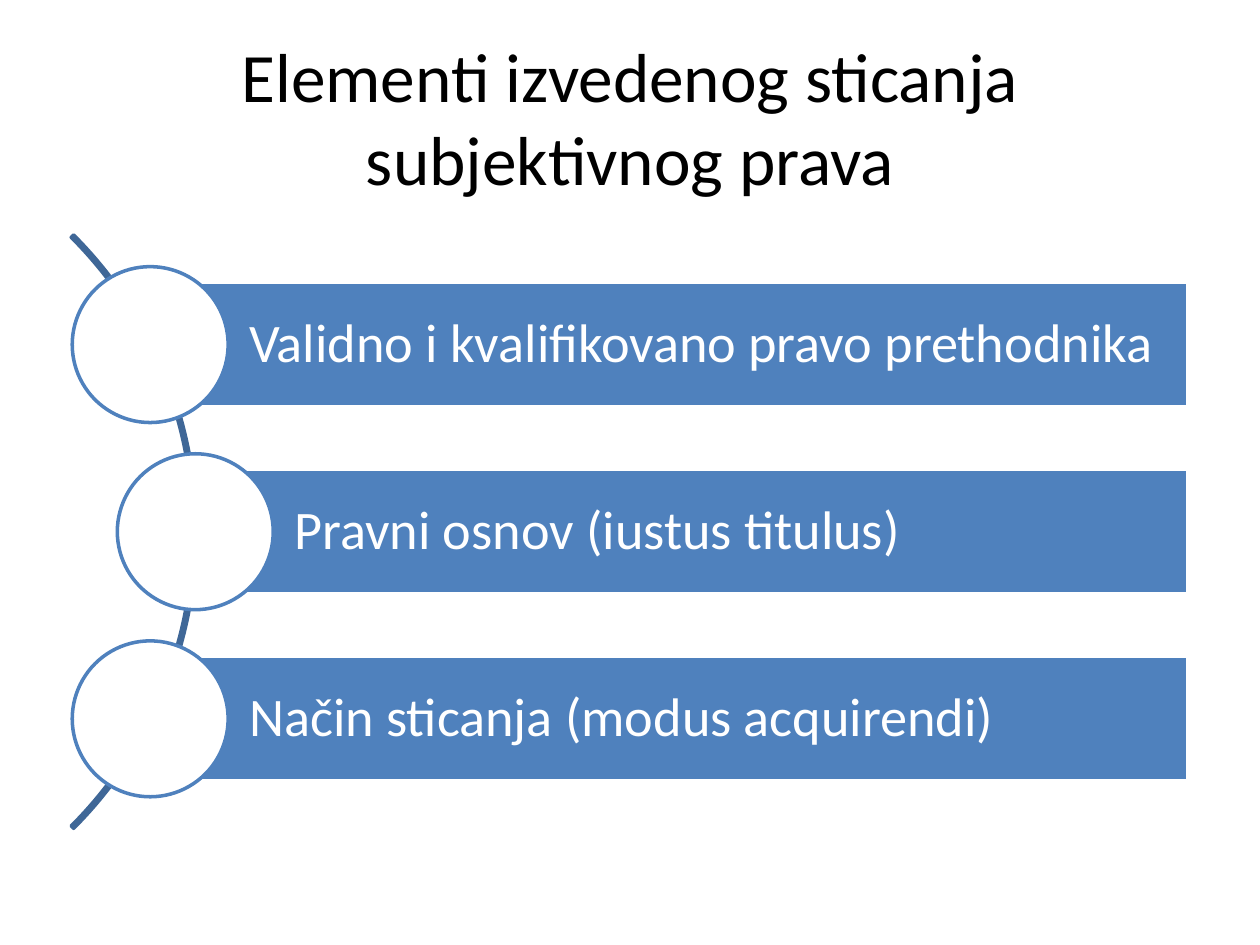
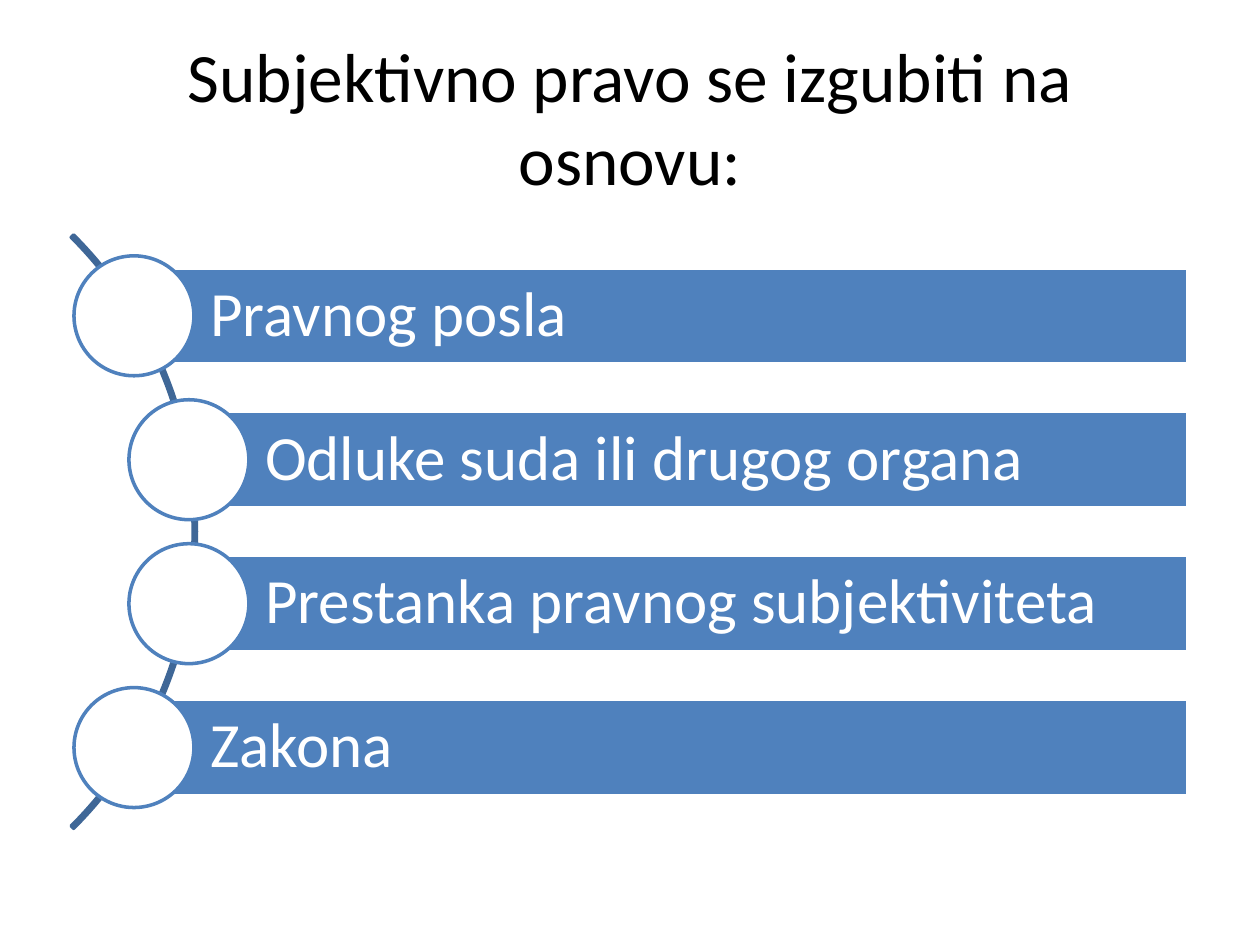
"""Build two slides that list legal elements as bars strung along an arc."""
import math

import pptx
import pptx.dml.color
import pptx.enum.shapes
import pptx.enum.text
import pptx.util

RGBColor = pptx.dml.color.RGBColor
MSO_SHAPE = pptx.enum.shapes.MSO_SHAPE
MSO_ANCHOR = pptx.enum.text.MSO_ANCHOR
Inches = pptx.util.Inches
Pt = pptx.util.Pt

BLUE = RGBColor(0x4F, 0x81, 0xBD)
DARK_BLUE = RGBColor(0x3F, 0x67, 0x97)
WHITE = RGBColor(0xFF, 0xFF, 0xFF)
BLACK = RGBColor(0x00, 0x00, 0x00)
FONT = "Calibri"

SLIDE_W, SLIDE_H = 10, 7.5
MARGIN = 0.05 * SLIDE_W
TITLE_TOP, TITLE_H = 0.04 * SLIDE_H, SLIDE_H / 6
BODY_H = 0.66 * SLIDE_H
MIDDLE_Y = 4.22
BAR_RIGHT = 9.43
ARC_LEFT, ARC_SIZE = -5.1, 6.66
TRACK_X, TRACK_R = -1.71, 3.26

SLIDES = [
    ("Elementi izvedenog sticanja subjektivnog prava", 31, [
        "Validno i kvalifikovano pravo prethodnika",
        "Pravni osnov (iustus titulus)",
        "Način sticanja (modus acquirendi)",
    ]),
    ("Subjektivno pravo se izgubiti na osnovu:", 36, [
        "Pravnog posla",
        "Odluke suda ili drugog organa",
        "Prestanka pravnog subjektiviteta",
        "Zakona",
    ]),
]


def add_shape(s, kind, left, top, width, height, fill, line):
    sp = s.shapes.add_shape(kind, Inches(left), Inches(top), Inches(width), Inches(height))
    sp.shadow.inherit = False
    if fill is None:
        sp.fill.background()
    else:
        sp.fill.solid()
        sp.fill.fore_color.rgb = fill
    sp.line.color.rgb = line
    sp.line.width = Pt(2)
    return sp


def add_run(p, text, size, color):
    r = p.add_run()
    r.text = text
    r.font.name = FONT
    r.font.size = Pt(size)
    r.font.color.rgb = color


prs = pptx.Presentation()
prs.slide_width, prs.slide_height = Inches(SLIDE_W), Inches(SLIDE_H)

for title, size, items in SLIDES:
    s = prs.slides.add_slide(prs.slide_layouts[5])
    sp = s.shapes.title
    sp.left, sp.top = Inches(MARGIN), Inches(TITLE_TOP)
    sp.width, sp.height = Inches(SLIDE_W - 2 * MARGIN), Inches(TITLE_H)
    tf = sp.text_frame
    tf.auto_size = pptx.enum.text.MSO_AUTO_SIZE.NONE
    tf.vertical_anchor = MSO_ANCHOR.MIDDLE
    p = tf.paragraphs[0]
    p.alignment = pptx.enum.text.PP_ALIGN.CENTER
    add_run(p, title, 39.6, BLACK)

    arc = add_shape(s, MSO_SHAPE.BLOCK_ARC, ARC_LEFT, MIDDLE_Y - ARC_SIZE / 2,
                    ARC_SIZE, ARC_SIZE, None, DARK_BLUE)
    arc.adjustments[0] = 189
    arc.adjustments[1] = 27
    arc.adjustments[2] = 0.004

    pitch = BODY_H / (len(items) + 1 / 3)
    bar_h = pitch * 2 / 3
    circle = bar_h * 1.25
    for i, item in enumerate(items):
        dy = (i - (len(items) - 1) / 2) * pitch
        x = TRACK_X + math.sqrt(TRACK_R ** 2 - dy ** 2)
        y = MIDDLE_Y + dy
        bar = add_shape(s, MSO_SHAPE.RECTANGLE, x, y - bar_h / 2,
                        BAR_RIGHT - x, bar_h, BLUE, WHITE)
        tf = bar.text_frame
        tf.word_wrap = True
        tf.vertical_anchor = MSO_ANCHOR.MIDDLE
        tf.margin_left = Inches(0.53 * pitch)
        tf.margin_top = tf.margin_right = tf.margin_bottom = Inches(0.09)
        p = tf.paragraphs[0]
        p.alignment = pptx.enum.text.PP_ALIGN.LEFT
        p.line_spacing = 0.9
        add_run(p, item, size, WHITE)
        add_shape(s, MSO_SHAPE.OVAL, x - circle / 2, y - circle / 2,
                  circle, circle, WHITE, BLUE)

prs.save("out.pptx")
